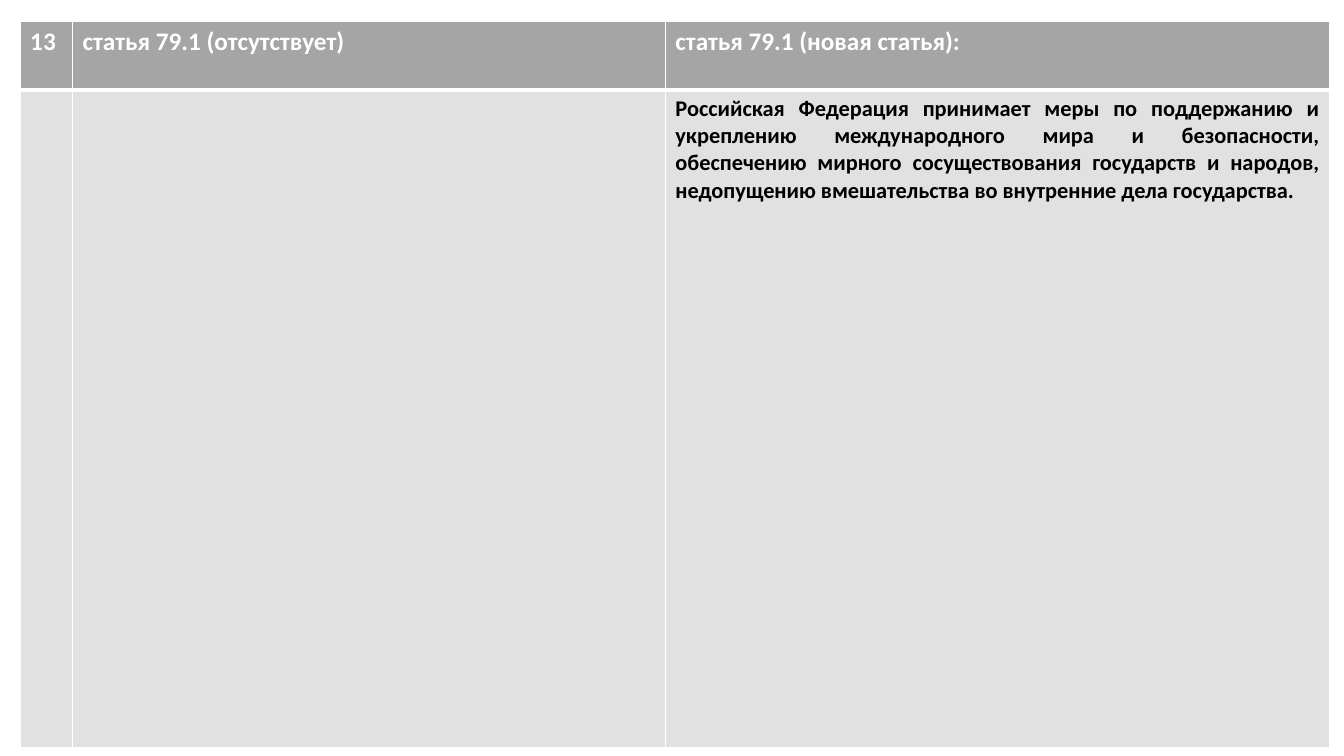
"""Build a slide comparing the old and new wording of one article in a table."""
from dataclasses import dataclass

from pptx import Presentation
from pptx import util as u
from pptx.dml.color import RGBColor
from pptx.enum import text
from pptx.oxml import ns, xmlchemy


@dataclass(frozen=True)
class Theme:
    """Colours, font and type sizes of the slide."""
    font: str = "Calibri"
    header_fill: str = "A5A5A5"
    body_fill: str = "E1E1E1"
    header_text: str = "FFFFFF"
    body_text: str = "000000"
    rule: str = "FFFFFF"
    header_size: float = 18
    body_size: float = 16
    thin: float = 1
    thick: float = 3


@dataclass(frozen=True)
class RowStyle:
    """Look of one table row, with border widths by side."""
    fill: str
    color: str
    size: float
    align: text.PP_ALIGN
    borders: dict[str, float]


THEME = Theme()
WIDTH, HEIGHT = u.Inches(13.33), u.Inches(7.5)
LEFT, TOP = 1.5, 2.8
COLUMNS = (3.9, 44.11, 49.44)
ROWS = (9.07, 87.07)

THIN_BOX = dict.fromkeys("LRTB", THEME.thin)
STYLES = (
    RowStyle(THEME.header_fill, THEME.header_text, THEME.header_size,
             text.PP_ALIGN.LEFT, THIN_BOX | {"B": THEME.thick}),
    RowStyle(THEME.body_fill, THEME.body_text, THEME.body_size,
             text.PP_ALIGN.JUSTIFY, THIN_BOX | {"T": THEME.thick}),
)
WORDING = (
    ("13", "статья 79.1 (отсутствует)", "статья 79.1 (новая статья):"),
    ("", "", "Российская Федерация принимает меры по поддержанию и укреплению "
             "международного мира и безопасности, обеспечению мирного "
             "сосуществования государств и народов, недопущению вмешательства "
             "во внутренние дела государства."),
)


def across(percent: float) -> int:
    """Turn a percentage of the slide width into a length."""
    return round(WIDTH * percent / 100)


def down(percent: float) -> int:
    """Turn a percentage of the slide height into a length."""
    return round(HEIGHT * percent / 100)


def draw_borders(cell, widths: dict[str, float]) -> None:
    """Give each side of a cell a solid rule."""
    tc_pr = cell._tc.get_or_add_tcPr()
    for i, (side, width) in enumerate(widths.items()):
        ln = xmlchemy.OxmlElement(f"a:ln{side}")
        ln.set("w", str(u.Pt(width)))
        fill = xmlchemy.OxmlElement("a:solidFill")
        color = xmlchemy.OxmlElement("a:srgbClr")
        color.set("val", THEME.rule)
        fill.append(color)
        ln.append(fill)
        tc_pr.insert(i, ln)


def fill_cell(cell, wording: str, style: RowStyle) -> None:
    """Write and format one cell."""
    cell.fill.solid()
    cell.fill.fore_color.rgb = RGBColor.from_string(style.fill)
    draw_borders(cell, style.borders)
    if not wording:
        return
    p = cell.text_frame.paragraphs[0]
    p.alignment = style.align
    r = p.add_run()
    r.text = wording
    formats = {"name": THEME.font, "size": u.Pt(style.size), "bold": True}
    for name, value in formats.items():
        setattr(r.font, name, value)
    r.font.color.rgb = RGBColor.from_string(style.color)


def draw_table(s) -> None:
    """Add the comparison table to the slide."""
    table = s.shapes.add_table(len(ROWS), len(COLUMNS), across(LEFT), down(TOP),
                               across(sum(COLUMNS)), down(sum(ROWS))).table
    for column, share in zip(table.columns, COLUMNS):
        column.width = across(share)
    for row, share, wordings, style in zip(table.rows, ROWS, WORDING, STYLES):
        row.height = down(share)
        for cell, wording in zip(row.cells, wordings):
            fill_cell(cell, wording, style)


def main() -> None:
    """Create and save the presentation."""
    prs = Presentation()
    prs.slide_width, prs.slide_height = WIDTH, HEIGHT
    draw_table(prs.slides.add_slide(prs.slide_layouts[6]))
    prs.save("out.pptx")


if __name__ == "__main__":
    main()
